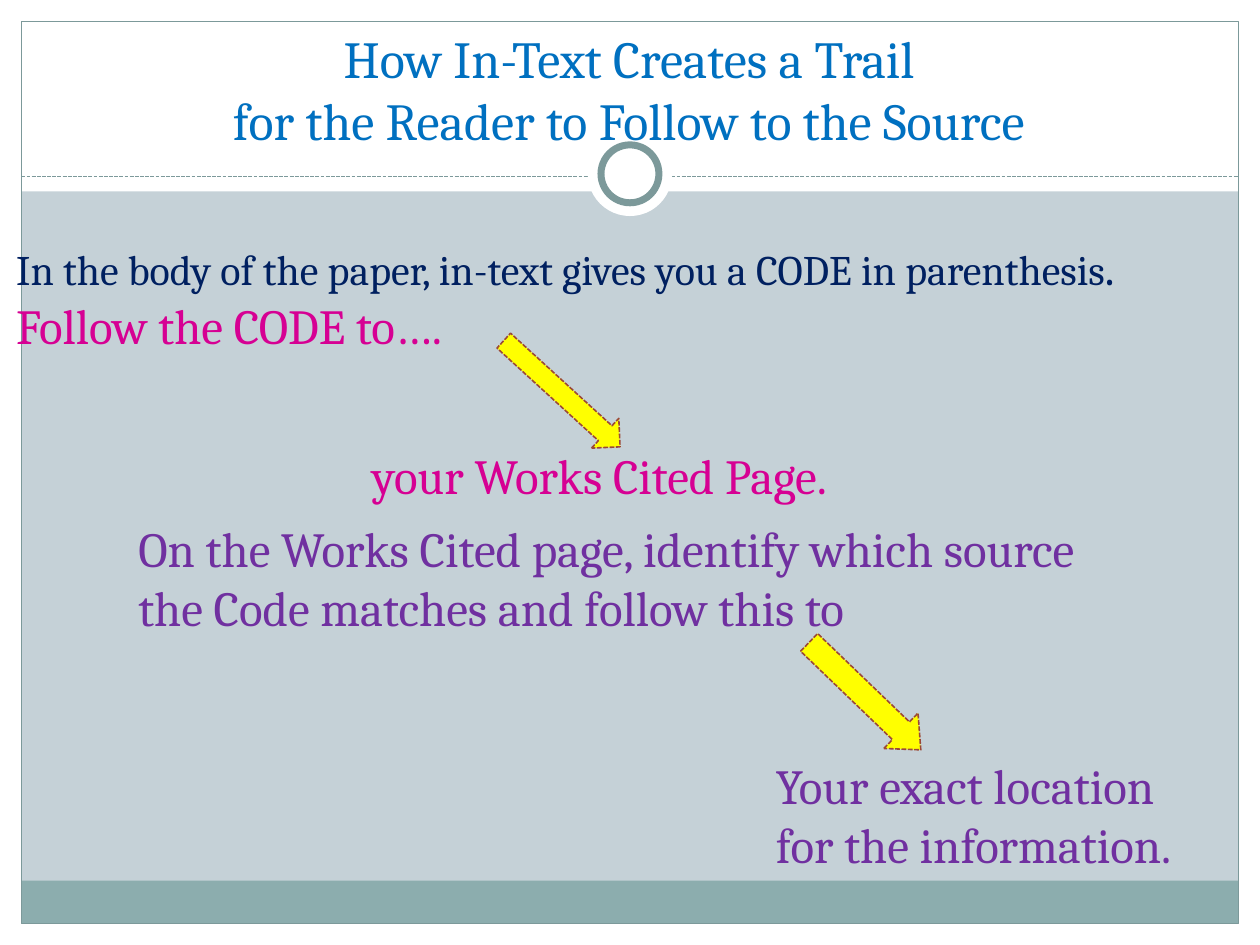
from dataclasses import dataclass

from lxml import etree
from pptx import Presentation
from pptx.dml.color import RGBColor
from pptx.enum.dml import MSO_LINE
from pptx.enum.shapes import MSO_CONNECTOR, MSO_SHAPE
from pptx.enum.text import MSO_ANCHOR, PP_ALIGN
from pptx.oxml.ns import qn
from pptx.util import Inches, Pt

RECTANGLE, OVAL = MSO_SHAPE.RECTANGLE, MSO_SHAPE.OVAL
DOWN_ARROW = MSO_SHAPE.DOWN_ARROW
STRAIGHT = MSO_CONNECTOR.STRAIGHT
SHORT_DASH = MSO_LINE.SQUARE_DOT
TOP, BOTTOM = MSO_ANCHOR.TOP, MSO_ANCHOR.BOTTOM
LEFT, CENTER = PP_ALIGN.LEFT, PP_ALIGN.CENTER

WHITE = RGBColor(0xFF, 0xFF, 0xFF)
MIST = RGBColor(0xC5, 0xD1, 0xD7)
TEAL = RGBColor(0x8C, 0xAD, 0xAE)
SLATE = RGBColor(0x7C, 0x99, 0x9A)
BLUE = RGBColor(0x00, 0x70, 0xC0)
NAVY = RGBColor(0x00, 0x20, 0x60)
PINK = RGBColor(0xD6, 0x00, 0x93)
PURPLE = RGBColor(0x70, 0x30, 0xA0)
YELLOW = RGBColor(0xFF, 0xFF, 0x00)
RUST = RGBColor(0x9B, 0x49, 0x36)

FONT = "Cambria"
WIDTH, HEIGHT, MARGIN = 10, 7.5, 0.17
HEADER_HEIGHT, DIVIDER_Y = 1.52, 1.4
INNER_WIDTH = WIDTH - 2 * MARGIN


@dataclass(frozen=True)
class Box:
    left: float
    top: float
    width: float
    height: float

    def lengths(self) -> tuple:
        return tuple(Inches(n) for n in (self.left, self.top, self.width, self.height))


@dataclass(frozen=True)
class Phrase:
    text: str
    color: RGBColor
    size: float = 28


@dataclass(frozen=True)
class Passage:
    box: Box
    lines: tuple[tuple[Phrase, ...], ...]
    align: int = LEFT
    anchor: int = TOP


@dataclass(frozen=True)
class TrailArrow:
    box: Box
    rotation: float
    head: float


PASSAGES = (
    Passage(
        Box(0.33, 0.42, 9.33, 0.83),
        ((Phrase("How In-Text Creates a Trail\vfor the Reader to Follow to the Source",
                 BLUE, 29.7),),),
        CENTER, BOTTOM,
    ),
    Passage(
        Box(0.03, 1.83, 9.93, 1.04),
        (
            (Phrase("In the body of the paper, in-text gives you a CODE in parenthesis",
                    NAVY, 24), Phrase(".", NAVY)),
            (Phrase("Follow the CODE to….", PINK),),
        ),
    ),
    Passage(Box(2.85, 3.49, 6.82, 0.57), ((Phrase("your Works Cited Page.", PINK),),)),
    Passage(
        Box(6.06, 5.95, 3.64, 1.04),
        ((Phrase("Your exact location", PURPLE),),
         (Phrase("for the information.", PURPLE),)),
    ),
    Passage(
        Box(1, 4.07, 7.67, 1.04),
        ((Phrase("On the Works Cited page, identify which source the Code matches "
                 "and follow this to", PURPLE),),),
    ),
)

TRAIL_ARROWS = (
    TrailArrow(Box(4.3, 2.5, 0.32, 1.25), 312.4, 0.5),
    TrailArrow(Box(6.67, 4.91, 0.39, 1.23), 313.9, 0.56),
)


def add_figure(slide, kind, box: Box, fill=None, line=None, weight: float = 0.75):
    figure = slide.shapes.add_shape(kind, *box.lengths())
    figure.shadow.inherit = False
    if fill is None:
        figure.fill.background()
    else:
        figure.fill.solid()
        figure.fill.fore_color.rgb = fill
    if line is None:
        figure.line.fill.background()
    else:
        figure.line.color.rgb = line
        figure.line.width = Pt(weight)
    return figure


def add_ring(slide, diameter: float, center_y: float, line=None) -> None:
    box = Box((WIDTH - diameter) / 2, center_y - diameter / 2, diameter, diameter)
    add_figure(slide, OVAL, box, WHITE, line, 4)


def add_divider(slide) -> None:
    y = Inches(DIVIDER_Y)
    divider = slide.shapes.add_connector(
        STRAIGHT, Inches(MARGIN), y, Inches(WIDTH - MARGIN), y)
    divider.line.color.rgb = SLATE
    divider.line.width = Pt(0.75)
    divider.line.dash_style = SHORT_DASH
    etree.SubElement(divider._element.spPr, qn("a:effectLst"))


def add_frame(slide) -> None:
    for border in (
        Box(0, HEIGHT - MARGIN, WIDTH, MARGIN),
        Box(0, 0, WIDTH, HEADER_HEIGHT),
        Box(0, 0, MARGIN, HEIGHT),
        Box(WIDTH - MARGIN, 0, MARGIN, HEIGHT),
    ):
        add_figure(slide, RECTANGLE, border, WHITE)
    add_figure(slide, RECTANGLE, Box(MARGIN, 6.99, INNER_WIDTH, 0.34), TEAL)
    outline = Box(MARGIN, MARGIN, INNER_WIDTH, HEIGHT - 2 * MARGIN)
    add_figure(slide, RECTANGLE, outline, line=SLATE)
    add_divider(slide)
    add_ring(slide, 0.67, 1.38)
    add_ring(slide, 0.46, 1.38, SLATE)


def add_passage(slide, passage: Passage) -> None:
    frame = slide.shapes.add_textbox(*passage.box.lengths()).text_frame
    frame.word_wrap = True
    frame.vertical_anchor = passage.anchor
    frame.text = "\n".join(line[0].text for line in passage.lines)
    for paragraph, (first, *others) in zip(frame.paragraphs, passage.lines):
        paragraph.alignment = passage.align
        styled = [(run, first) for run in paragraph.runs]
        for phrase in others:
            run = paragraph.add_run()
            run.text = phrase.text
            styled.append((run, phrase))
        for run, phrase in styled:
            run.font.name = FONT
            run.font.size = Pt(phrase.size)
            run.font.color.rgb = phrase.color


def add_trail_arrow(slide, trail: TrailArrow) -> None:
    arrow = add_figure(slide, DOWN_ARROW, trail.box, YELLOW, RUST, 0.9)
    arrow.line.dash_style = SHORT_DASH
    arrow.rotation = trail.rotation
    arrow.adjustments[1] = trail.head


def main() -> None:
    deck = Presentation()
    deck.slide_width, deck.slide_height = Inches(WIDTH), Inches(HEIGHT)
    slide = deck.slides.add_slide(deck.slide_layouts[6])
    slide.background.fill.solid()
    slide.background.fill.fore_color.rgb = MIST
    add_frame(slide)
    for passage in PASSAGES:
        add_passage(slide, passage)
    for trail in TRAIL_ARROWS:
        add_trail_arrow(slide, trail)
    deck.save("out.pptx")


if __name__ == "__main__":
    main()
